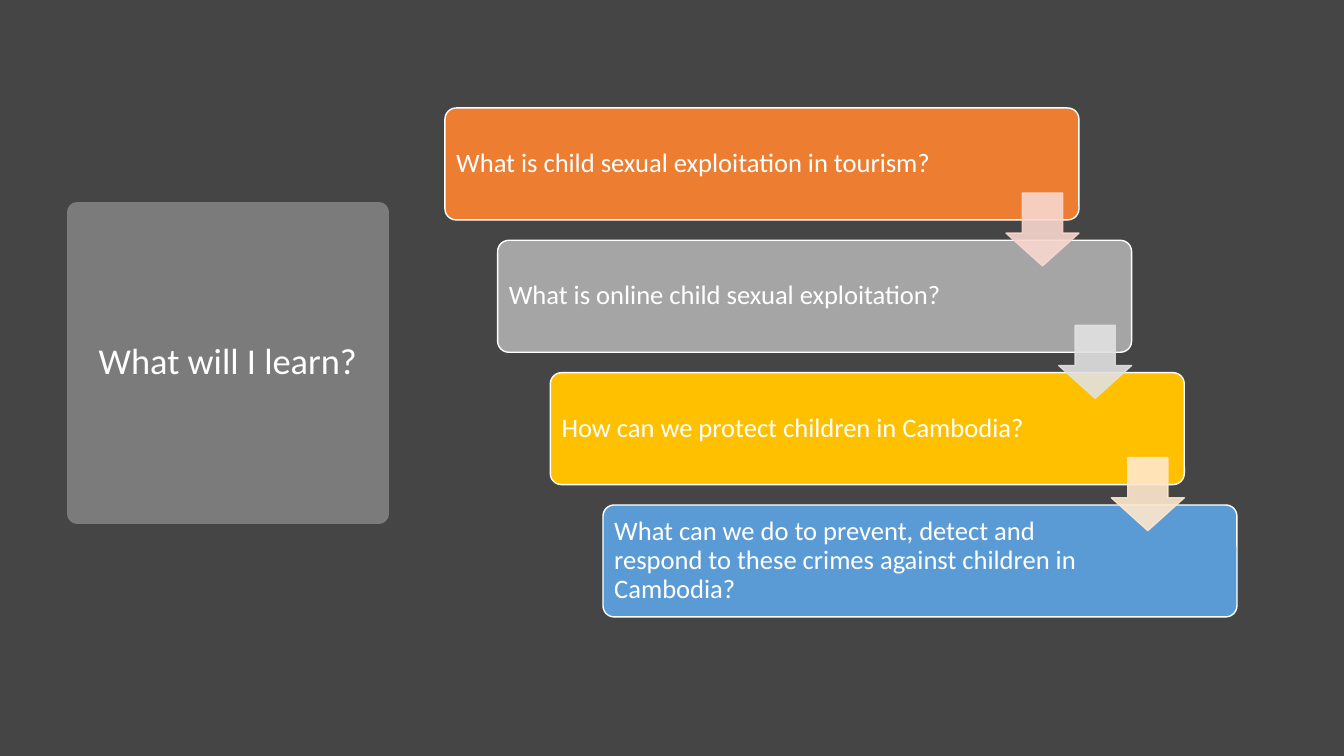
"""Build the "What will I learn?" slide with four stepped questions."""
from lxml.etree import SubElement
from pptx import Presentation
from pptx.dml.color import RGBColor
from pptx.enum.shapes import MSO_SHAPE as Shape
from pptx.enum.text import MSO_ANCHOR as Anchor, MSO_AUTO_SIZE as AutoSize, PP_ALIGN as Align
from pptx.oxml.ns import qn
from pptx.util import Emu, Pt

TITLE = "What will I learn?"
QUESTIONS = [
    ("What is child sexual exploitation in tourism?", "orange", "pale_orange"),
    ("What is online child sexual exploitation?", "gray", "pale_gray"),
    ("How can we protect children in Cambodia?", "gold", "pale_gold"),
    ("What can we do to prevent, detect and respond to these crimes "
     "against children in Cambodia?", "blue", None),
]
COLORS = {
    "background": "454545", "title": "7B7B7B", "white": "FFFFFF",
    "orange": "ED7D31", "gray": "A5A5A5", "gold": "FFC000", "blue": "5B9BD5",
    "pale_orange": "F8D7CE", "pale_gray": "E1E1E1", "pale_gold": "FFE8CC",
}
FONT = "Calibri"
PX = 914400 / 100.8
TITLE_BOX = (77, 212, 302, 302)
BAR_LEFT, BAR_TOP, BAR_W, BAR_H = 445, 108, 634, 112
LAST_LEFT, LAST_TOP = 603, 505
ARROW_DX, ARROW_DY, ARROW_SIZE = 561, 85, 73
PAD, PAD_RIGHT = 8, 135


def px(n):
    return Emu(round(n * PX))


def rgb(name):
    return RGBColor.from_string(COLORS[name])


def paint(sp, fill, line, width):
    sp.fill.solid()
    sp.fill.fore_color.rgb = rgb(fill)
    sp.line.color.rgb = rgb(line)
    sp.line.width = Pt(width)


def write(sp, text, size, align):
    tf = sp.text_frame
    tf.word_wrap = True
    tf.auto_size = AutoSize.NONE
    tf.vertical_anchor = Anchor.MIDDLE
    p = tf.paragraphs[0]
    p.alignment = align
    p.line_spacing = 0.9
    r = p.add_run()
    r.text = text
    r.font.name = FONT
    r.font.size = Pt(size)
    r.font.color.rgb = rgb("white")
    return tf


def add_shape(s, kind, box, adjustments, fill, line):
    sp = s.shapes.add_shape(kind, *map(px, box))
    sp.shadow.inherit = False
    for i, value in enumerate(adjustments):
        sp.adjustments[i] = value
    paint(sp, fill, line, 1)
    return sp


def add_bar(s, left, top, text, color):
    sp = add_shape(s, Shape.ROUNDED_RECTANGLE, (left, top, BAR_W, BAR_H), [0.1], color, "white")
    tf = write(sp, text, 19, Align.LEFT)
    tf.margin_left = tf.margin_top = tf.margin_bottom = px(PAD)
    tf.margin_right = px(PAD_RIGHT)


def add_arrow(s, left, top, color):
    box = (left + ARROW_DX, top + ARROW_DY, ARROW_SIZE, ARROW_SIZE)
    sp = add_shape(s, Shape.DOWN_ARROW, box, [0.55, 0.45], color, color)
    for clr in sp.element.spPr.iter(qn("a:srgbClr")):
        SubElement(clr, qn("a:alpha")).set("val", "90000")


def main():
    prs = Presentation()
    prs.slide_width, prs.slide_height = px(1344), px(756)
    s = prs.slides.add_slide(prs.slide_layouts[5])
    s.background.fill.solid()
    s.background.fill.fore_color.rgb = rgb("background")

    title = s.shapes.title
    title.left, title.top, title.width, title.height = map(px, TITLE_BOX)
    paint(title, "title", "title", 13.75)
    write(title, TITLE, 26, Align.CENTER)

    steps = len(QUESTIONS) - 1
    spots = [(BAR_LEFT + (LAST_LEFT - BAR_LEFT) * i / steps,
              BAR_TOP + (LAST_TOP - BAR_TOP) * i / steps) for i in range(steps + 1)]
    for (left, top), (text, color, _) in zip(spots, QUESTIONS):
        add_bar(s, left, top, text, color)
    for (left, top), (_, _, pale) in zip(spots, QUESTIONS):
        if pale:
            add_arrow(s, left, top, pale)
    prs.save("out.pptx")


if __name__ == "__main__":
    main()
